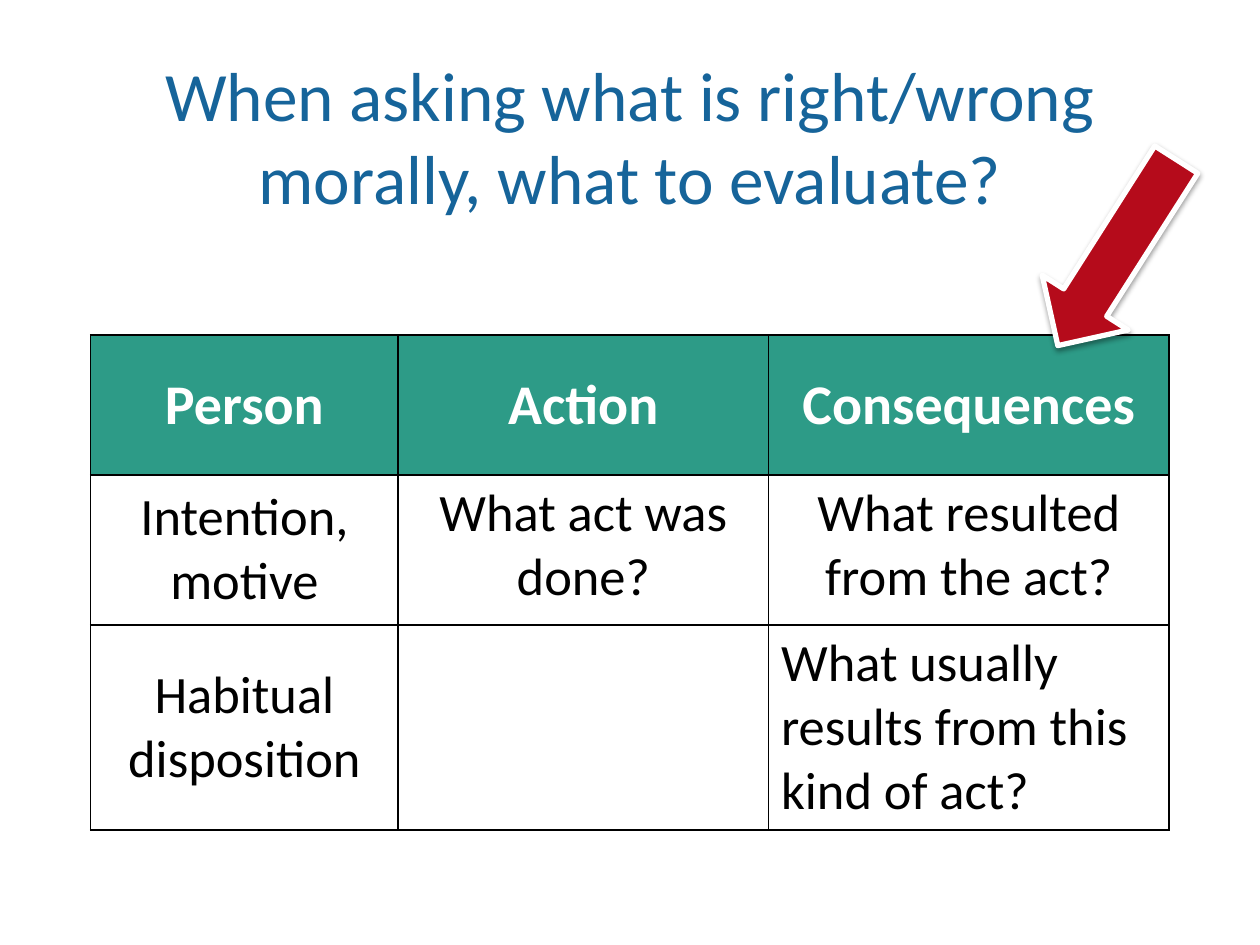
"""Build a slide with a table of what to evaluate in moral questions."""
from dataclasses import dataclass

from lxml.etree import SubElement
from pptx import Presentation
from pptx.dml.color import RGBColor
from pptx.enum.shapes import MSO_SHAPE
from pptx.enum.text import MSO_ANCHOR, PP_ALIGN
from pptx.oxml.ns import qn
from pptx.util import Inches, Pt

FONT = "Calibri"
BLUE = RGBColor(0x16, 0x64, 0x9A)
GREEN = RGBColor(0x2D, 0x9B, 0x87)
RED = RGBColor(0xB5, 0x0B, 0x1B)
WHITE = RGBColor(0xFF, 0xFF, 0xFF)
BLACK = RGBColor(0x00, 0x00, 0x00)

COL_WIDTHS = (2.44, 2.94, 3.18)
ROW_HEIGHTS = (1.11, 1.19, 1.6)


@dataclass
class Entry:
    text: str
    anchor: MSO_ANCHOR = MSO_ANCHOR.TOP
    align: PP_ALIGN = PP_ALIGN.CENTER


HEADERS = [Entry(t, MSO_ANCHOR.MIDDLE) for t in ("Person", "Action", "Consequences")]
BODY = [
    [
        Entry("Intention, motive", MSO_ANCHOR.MIDDLE),
        Entry("What act was done?"),
        Entry("What resulted from the act?"),
    ],
    [
        Entry("Habitual disposition", MSO_ANCHOR.MIDDLE),
        Entry(""),
        Entry("What usually results from this kind of act?", align=PP_ALIGN.LEFT),
    ],
]


def add_run(p, text: str, size: float, color: RGBColor, bold: bool = False) -> None:
    r = p.add_run()
    r.text = text
    r.font.name = FONT
    r.font.size = Pt(size)
    r.font.bold = bold
    r.font.color.rgb = color


def add_color(parent, color: RGBColor):
    return SubElement(parent, qn("a:srgbClr"), val=str(color))


def add_borders(cell) -> None:
    tc_pr = cell._tc.get_or_add_tcPr()
    for side in ("lnL", "lnR", "lnT", "lnB"):
        ln = SubElement(tc_pr, qn(f"a:{side}"), w=str(Pt(1)))
        add_color(SubElement(ln, qn("a:solidFill")), BLACK)


def fill_cell(cell, entry: Entry, header: bool) -> None:
    add_borders(cell)
    if header:
        cell.fill.solid()
        cell.fill.fore_color.rgb = GREEN
    else:
        cell.fill.background()
    cell.vertical_anchor = entry.anchor
    if entry.text:
        p = cell.text_frame.paragraphs[0]
        p.alignment = entry.align
        size, color = (32, WHITE) if header else (30, BLACK)
        add_run(p, entry.text, size, color, header)


def add_title(s) -> None:
    sp = s.shapes.title
    sp.left, sp.top, sp.width, sp.height = map(Inches, (0.5, 0.3, 9, 1.55))
    tf = sp.text_frame
    tf.vertical_anchor = MSO_ANCHOR.MIDDLE
    p = tf.paragraphs[0]
    p.alignment = PP_ALIGN.CENTER
    add_run(p, "When asking what is right/wrong morally, what to evaluate?", 39.6, BLUE)


def add_grid(s) -> None:
    rows = [HEADERS, *BODY]
    table = s.shapes.add_table(
        len(rows), len(COL_WIDTHS), Inches(0.72), Inches(2.66),
        Inches(sum(COL_WIDTHS)), Inches(sum(ROW_HEIGHTS)),
    ).table
    for column, width in zip(table.columns, COL_WIDTHS):
        column.width = Inches(width)
    for i, (entries, height) in enumerate(zip(rows, ROW_HEIGHTS)):
        table.rows[i].height = Inches(height)
        for j, entry in enumerate(entries):
            fill_cell(table.cell(i, j), entry, header=i == 0)


def add_arrow(s) -> None:
    sp = s.shapes.add_shape(
        MSO_SHAPE.UP_ARROW, Inches(8.46), Inches(1.13), Inches(0.81), Inches(1.75)
    )
    sp.rotation = 212.5
    sp.fill.solid()
    sp.fill.fore_color.rgb = RED
    sp.line.color.rgb = WHITE
    sp.line.width = Pt(3)
    sp.shadow.inherit = False
    effects = sp._element.spPr.find(qn("a:effectLst"))
    shadow = SubElement(
        effects, qn("a:outerShdw"), blurRad=str(Pt(3.1)), dist=str(Pt(1.6)),
        dir="5400000", rotWithShape="0",
    )
    SubElement(add_color(shadow, BLACK), qn("a:alpha"), val="38000")


def main() -> None:
    prs = Presentation()
    prs.slide_width, prs.slide_height = Inches(10), Inches(7.5)
    s = prs.slides.add_slide(prs.slide_layouts[5])
    add_title(s)
    add_grid(s)
    add_arrow(s)
    prs.save("out.pptx")


if __name__ == "__main__":
    main()
